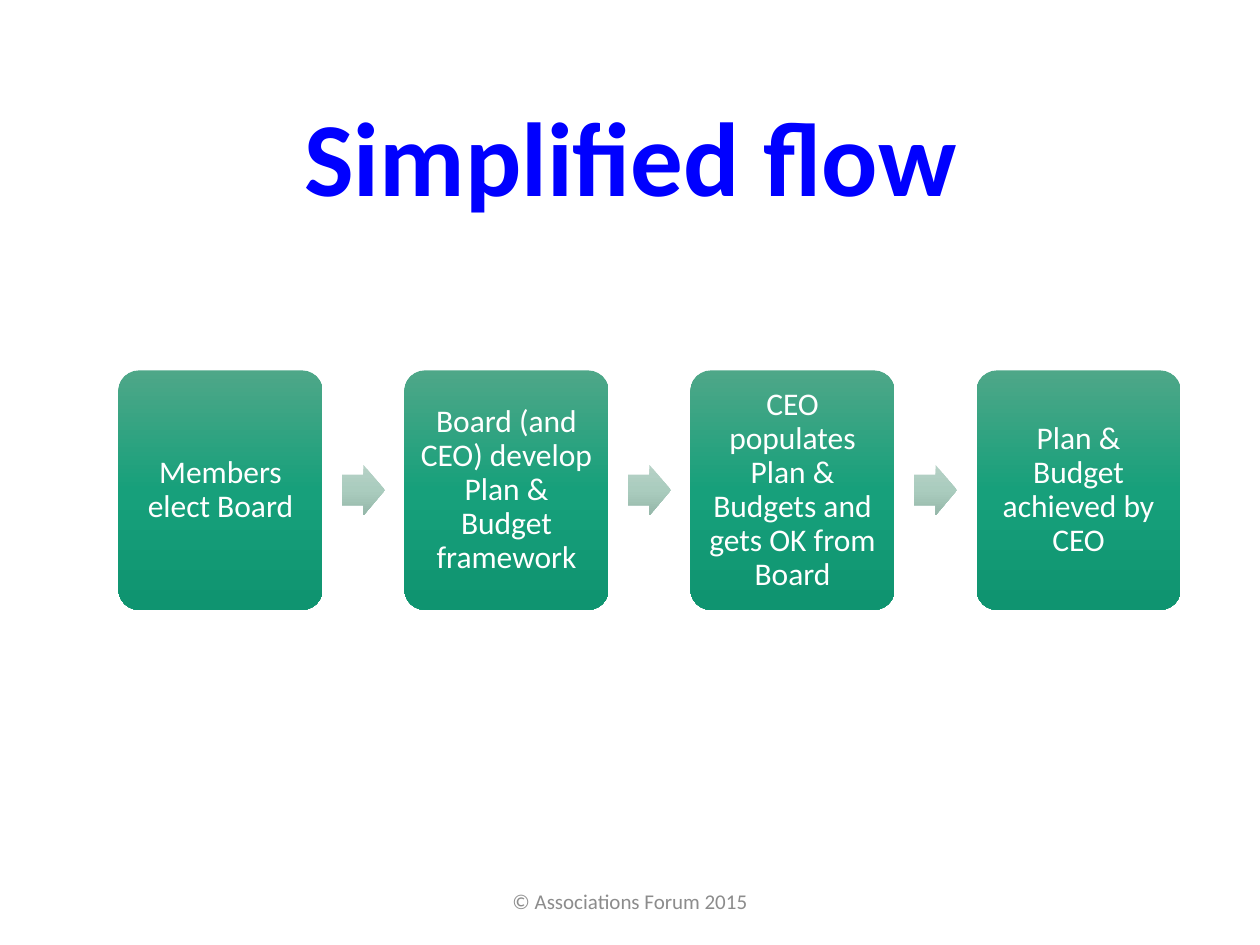
from copy import deepcopy

from pptx import Presentation
from pptx.dml.color import RGBColor
from pptx.enum.shapes import MSO_SHAPE
from pptx.enum.text import MSO_ANCHOR, MSO_AUTO_SIZE, PP_ALIGN
from pptx.oxml.ns import qn
from pptx.util import Inches, Pt

CARD, ARROW = MSO_SHAPE.ROUNDED_RECTANGLE, MSO_SHAPE.RIGHT_ARROW
TOP, MIDDLE = MSO_ANCHOR.TOP, MSO_ANCHOR.MIDDLE
CENTER, GROW = PP_ALIGN.CENTER, MSO_AUTO_SIZE.SHAPE_TO_FIT_TEXT

GREEN = ("4EA788", "17A07B", "0F9470")
PALE = ("B6D1C6", "AACCBE", "95B7A9")
STEPS = (
    "Members elect Board",
    "Board (and CEO) develop Plan & Budget framework",
    "CEO populates Plan & Budgets and gets OK from Board",
    "Plan & Budget achieved by CEO",
)


def color(code):
    return RGBColor.from_string(code)


def apply(target, values):
    for name, value in values.items():
        setattr(target, name, value)


def write(frame, text, size, code, bold=False, **values):
    apply(frame, values)
    para = frame.paragraphs[0]
    para.text = text
    para.alignment = CENTER
    apply(para.font, {"name": "Calibri", "size": Pt(size), "bold": bold})
    para.font.color.rgb = color(code)
    return para


def shade(shape, codes):
    """Fill with evenly spaced colours from top to bottom."""
    fill = shape.fill
    fill.gradient()
    fill.gradient_angle = 270
    stops = shape._element.spPr.find(".//" + qn("a:gsLst"))
    while len(stops) < len(codes):
        stops.append(deepcopy(stops[-1]))
    for i, (stop, code) in enumerate(zip(fill.gradient_stops, codes)):
        stop.position = i / (len(codes) - 1)
        stop.color.rgb = color(code)


def add_block(slide, kind, box, codes, adjust):
    shape = slide.shapes.add_shape(kind, *map(Inches, box))
    shape.shadow.inherit = False
    shape.line.fill.background()
    shade(shape, codes)
    for i, value in enumerate(adjust):
        shape.adjustments[i] = value
    return shape


def add_title(slide, box, text):
    title = slide.shapes.title
    title.left, title.top, title.width, title.height = map(Inches, box)
    write(title.text_frame, text, 60, "0000FF", True, word_wrap=False,
          auto_size=GROW, vertical_anchor=TOP)


def add_flow(slide, box, steps):
    """Spread cards over the box, with an arrow in each gap."""
    left, top, width, height = box
    card, wide, high = 1.62, 0.34, 0.4
    pitch = (width - card) / (len(steps) - 1)
    for i, step in enumerate(steps):
        x = left + i * pitch
        if i:
            spot = (x - (pitch - card + wide) / 2,
                    top + (height - high) / 2, wide, high)
            add_block(slide, ARROW, spot, PALE, (0.6, 0.5))
        shape = add_block(slide, CARD, (x, top, card, height), GREEN, (0.1,))
        sides = ("left", "top", "right", "bottom")
        margins = {f"margin_{side}": Inches(0.07) for side in sides}
        para = write(shape.text_frame, step, 18, "FFFFFF", word_wrap=True,
                     vertical_anchor=MIDDLE, **margins)
        para.line_spacing = 0.9


def add_footer(slide, box, text):
    frame = slide.shapes.add_textbox(*map(Inches, box)).text_frame
    write(frame, text, 12, "8C8C8C", word_wrap=True, vertical_anchor=MIDDLE)


def main():
    deck = Presentation()
    deck.slide_width, deck.slide_height = Inches(10), Inches(7.5)
    slide = deck.slides.add_slide(deck.slide_layouts[5])
    add_title(slide, (2.28, 0.68, 5.45, 1.11), "Simplified flow")
    add_flow(slide, (0.94, 2.94, 8.43, 1.9), STEPS)
    add_footer(slide, (3.31, 6.95, 3.38, 0.4), "© Associations Forum 2015")
    deck.save("out.pptx")


if __name__ == "__main__":
    main()
